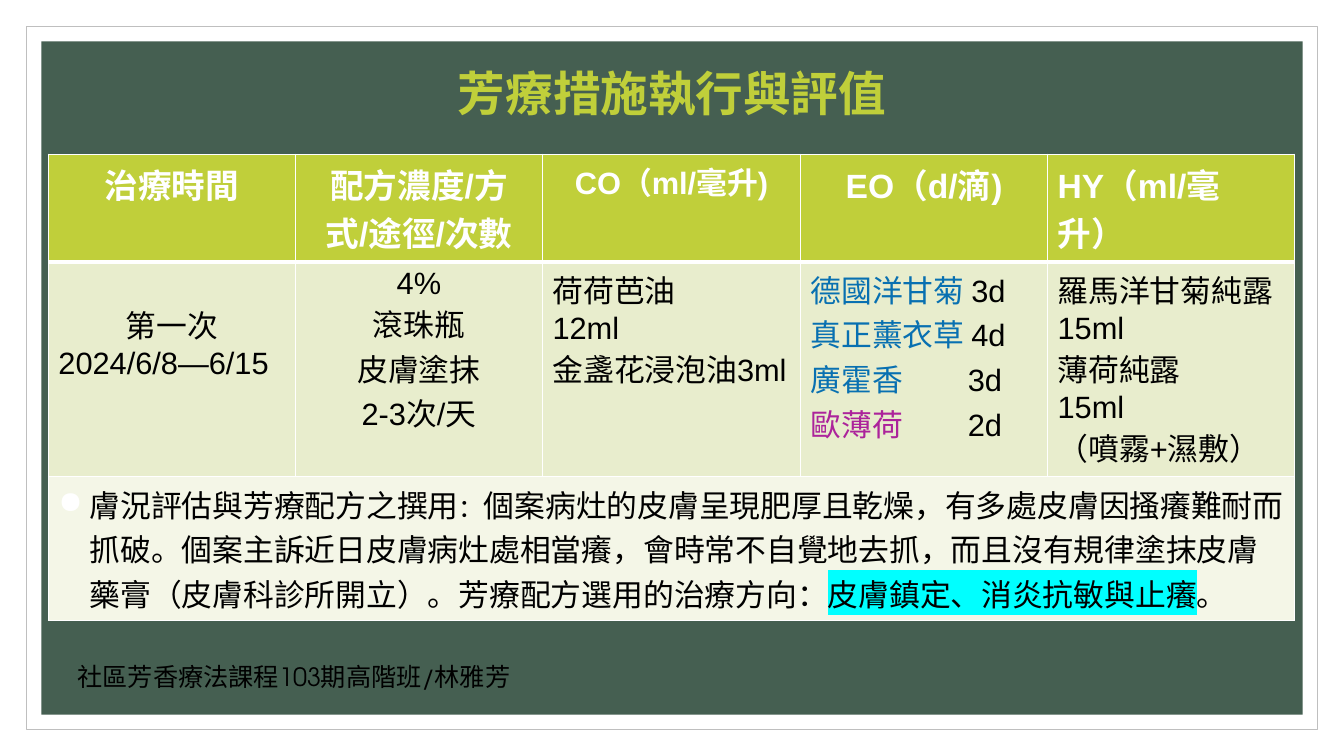
from lxml.etree import SubElement
from pptx import Presentation
from pptx.dml.color import RGBColor
from pptx.enum.shapes import MSO_SHAPE as Shape
from pptx.enum.text import MSO_ANCHOR as Anchor, PP_ALIGN as Align
from pptx.oxml import parse_xml
from pptx.oxml.ns import nsdecls, qn
from pptx.util import Inches, Pt

WIDTH, HEIGHT = 13.33, 7.5
LIME, GREEN, WHITE, BLACK = "C0CF3A", "455F51", "FFFFFF", "000000"
BLUE, PURPLE, CYAN = "0870B1", "AC239B", "00FFFF"
BODY_FILL, NOTE_FILL = "E8EDCD", "F4F6E7"

COLUMNS = [2.45, 2.45, 2.56, 2.45, 2.45]
ROWS = [0.99, 2.13, 1.32]
HEADERS = [("治療時間", 24), ("配方濃度/方式/途徑/次數", 24), ("CO（ml/毫升)", 22),
           ("EO（d/滴)", 24), ("HY（ml/毫升）", 24)]
TREATMENT = [
    ["第一次", "2024/6/8—6/15"],
    ["4%", "滾珠瓶", "皮膚塗抹", "2-3次/天"],
    ["荷荷芭油", "12ml", "金盞花浸泡油3ml"],
    [[("德國洋甘菊", {"color": BLUE}), (" 3d", {})],
     [("真正薰衣草", {"color": BLUE}), (" 4d", {})],
     [("廣霍香", {"color": BLUE}), ("\t3d", {})],
     [("歐薄荷", {"color": PURPLE}), ("\t2d", {})]],
    ["羅馬洋甘菊純露15ml", "薄荷純露", "15ml", "（噴霧+濕敷）"],
]
CENTERED = {(0, 0), (1, 0), (1, 1), (1, 2), (1, 3)}  # (column, paragraph)
ASSESSMENT = [
    ("膚況評估與芳療配方之撰用", {}), ("：", {"size": 18}),
    ("個案病灶的皮膚呈現肥厚且乾燥，有多處皮膚因搔癢難耐而抓破。"
     "個案主訴近日皮膚病灶處相當癢，會時常不自覺地去抓，"
     "而且沒有規律塗抹皮膚藥膏（皮膚科診所開立）。芳療配方選用的治療方向：", {}),
    ("皮膚鎮定、消炎抗敏與止癢", {"highlight": CYAN}), ("。", {}),
]


def rgb(color):
    return RGBColor.from_string(color)


def write(para, content, size, color, align=Align.LEFT, bold=False, name="Arial"):
    """Fill a paragraph with a string or with (text, changes) spans."""
    para.alignment = align
    font = para.font
    font.name, font.size, font.bold = name, Pt(size), bold
    font.color.rgb = rgb(color)
    spans = [(content, {})] if isinstance(content, str) else content
    for text, changes in spans:
        span = para.add_run()
        span.text = text
        if "size" in changes:
            span.font.size = Pt(changes["size"])
        if "color" in changes:
            span.font.color.rgb = rgb(changes["color"])
        if "highlight" in changes:
            mark = SubElement(span.font._element, qn("a:highlight"))
            SubElement(mark, qn("a:srgbClr"), val=changes["highlight"])


def write_lines(frame, lines, size, color, aligns):
    for index, (line, align) in enumerate(zip(lines, aligns)):
        para = frame.paragraphs[0] if index == 0 else frame.add_paragraph()
        write(para, line, size, color, align)


def add_bullet(para, color):
    props = para._p.get_or_add_pPr()
    props.set("marL", str(Inches(0.31)))
    props.set("indent", str(-Inches(0.31)))
    space = nsdecls("a")
    props.insert(0, parse_xml(f'<a:buClr {space}><a:srgbClr val="{color}"/></a:buClr>'))
    props.insert(1, parse_xml(f'<a:buChar {space} char="●"/>'))


def add_tab_stop(para, position):
    para._p.get_or_add_pPr().insert(0, parse_xml(
        f'<a:tabLst {nsdecls("a")}><a:tab pos="{Inches(position)}" algn="l"/></a:tabLst>'))


def style_cell(cell, fill, bottom=1):
    """White borders around a plain fill."""
    props = cell._tc.get_or_add_tcPr()
    for side, width in (("L", 1), ("R", 1), ("T", 1), ("B", bottom)):
        props.append(parse_xml(
            f'<a:ln{side} {nsdecls("a")} w="{Pt(width)}"><a:solidFill>'
            f'<a:srgbClr val="{WHITE}"/></a:solidFill></a:ln{side}>'))
    cell.fill.solid()
    cell.fill.fore_color.rgb = rgb(fill)


def add_frame(page):
    """White margin with a thin outline around a green panel."""
    for depth, (inset, fill, line) in enumerate([(0.26, WHITE, "BFBFBF"), (0.41, GREEN, None)]):
        panel = page.shapes.add_shape(
            Shape.RECTANGLE, Inches(inset), Inches(inset),
            Inches(WIDTH - 2 * inset), Inches(HEIGHT - 2 * inset))
        panel.shadow.inherit = False
        panel.fill.solid()
        panel.fill.fore_color.rgb = rgb(fill)
        if line:
            panel.line.color.rgb = rgb(line)
            panel.line.width = Pt(0.75)
        else:
            panel.line.fill.background()
        page.shapes.element.insert(2 + depth, panel.element)  # behind the title


def add_title(page, box):
    title = page.shapes.title
    title.left, title.top, title.width, title.height = map(Inches, box)
    frame = title.text_frame
    frame.vertical_anchor = Anchor.MIDDLE
    write(frame.paragraphs[0], "芳療措施執行與評值", 34, LIME, Align.CENTER, bold=True)
    frame.paragraphs[0].line_spacing = 0.9


def add_treatment_table(page, left, top):
    table = page.shapes.add_table(
        len(ROWS), len(COLUMNS), Inches(left), Inches(top),
        Inches(sum(COLUMNS)), Inches(sum(ROWS))).table
    for column, width in zip(table.columns, COLUMNS):
        column.width = Inches(width)
    for row, height in zip(table.rows, ROWS):
        row.height = Inches(height)

    # Header row
    for index, (text, size) in enumerate(HEADERS):
        cell = table.cell(0, index)
        style_cell(cell, LIME, bottom=3)
        align = Align.LEFT if index == len(HEADERS) - 1 else Align.CENTER
        write(cell.text_frame.paragraphs[0], text, size, WHITE, align, bold=True)

    # Treatment row
    for index, lines in enumerate(TREATMENT):
        cell = table.cell(1, index)
        style_cell(cell, BODY_FILL)
        aligns = [Align.CENTER if (index, number) in CENTERED else Align.LEFT
                  for number in range(len(lines))]
        write_lines(cell.text_frame, lines, 22, BLACK, aligns)
    table.cell(1, 0).margin_top = Inches(0.4)
    for para in table.cell(1, 3).text_frame.paragraphs[2:]:
        add_tab_stop(para, 1.56)

    # Assessment across the full width
    note = table.cell(2, 0)
    note.merge(table.cell(2, len(COLUMNS) - 1))
    style_cell(note, NOTE_FILL)
    para = note.text_frame.paragraphs[0]
    write(para, ASSESSMENT, 22, BLACK)
    add_bullet(para, WHITE)


def add_credit(page, box):
    frame = page.shapes.add_textbox(*map(Inches, box)).text_frame
    frame.word_wrap = True
    frame.vertical_anchor = Anchor.BOTTOM
    write(frame.paragraphs[0], "社區芳香療法課程103期高階班/林雅芳", 18, BLACK,
          name="TeX Gyre Adventor")


def main():
    deck = Presentation()
    deck.slide_width, deck.slide_height = Inches(WIDTH), Inches(HEIGHT)
    page = deck.slides.add_slide(deck.slide_layouts[5])
    add_frame(page)
    add_title(page, (0.61, 0.65, 12.11, 0.61))
    add_treatment_table(page, 0.48, 1.53)
    add_credit(page, (0.67, 6.2, 4.83, 0.71))
    deck.save("out.pptx")


if __name__ == "__main__":
    main()
